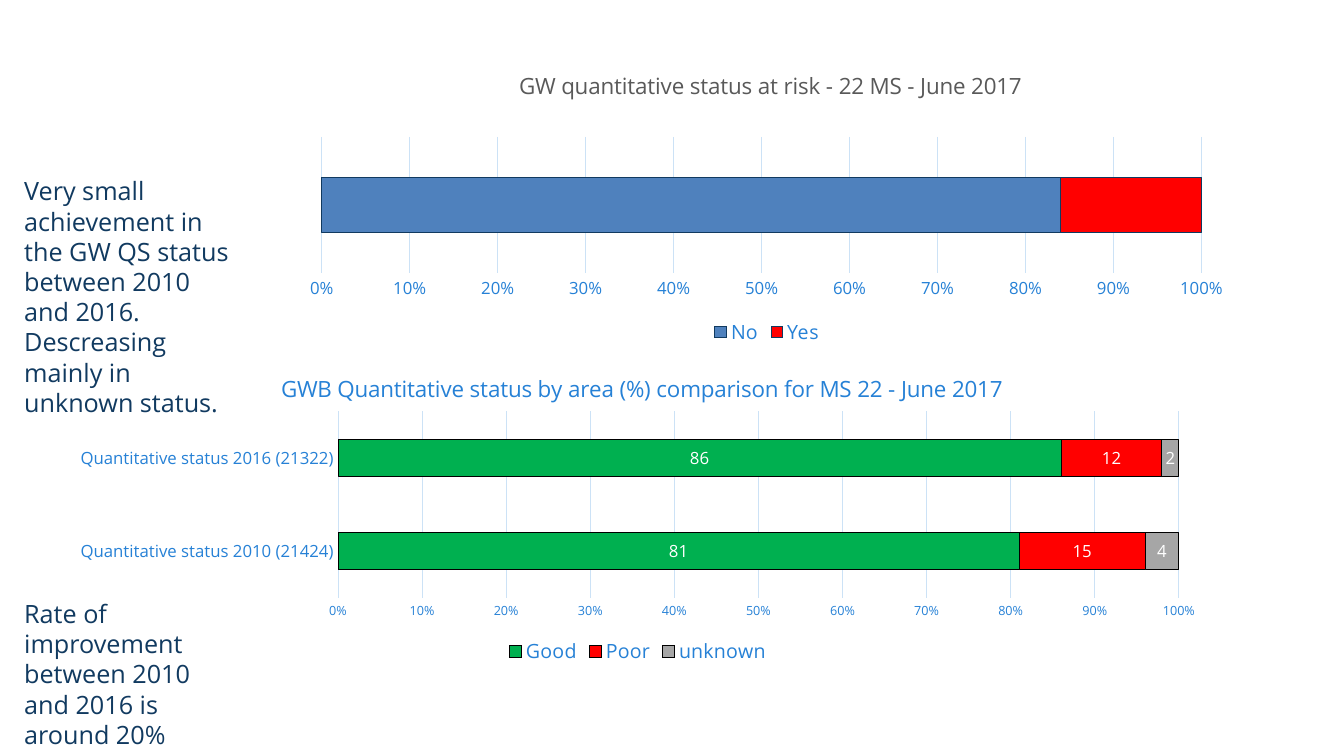
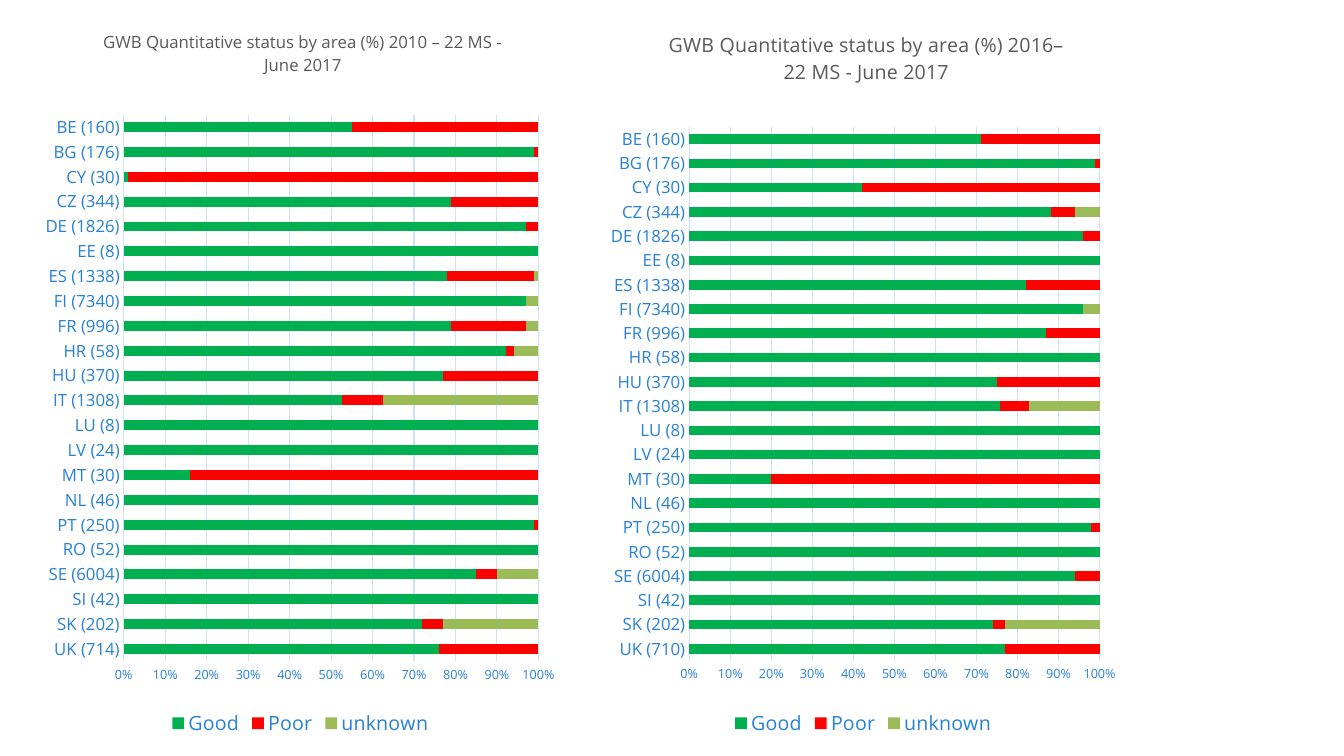
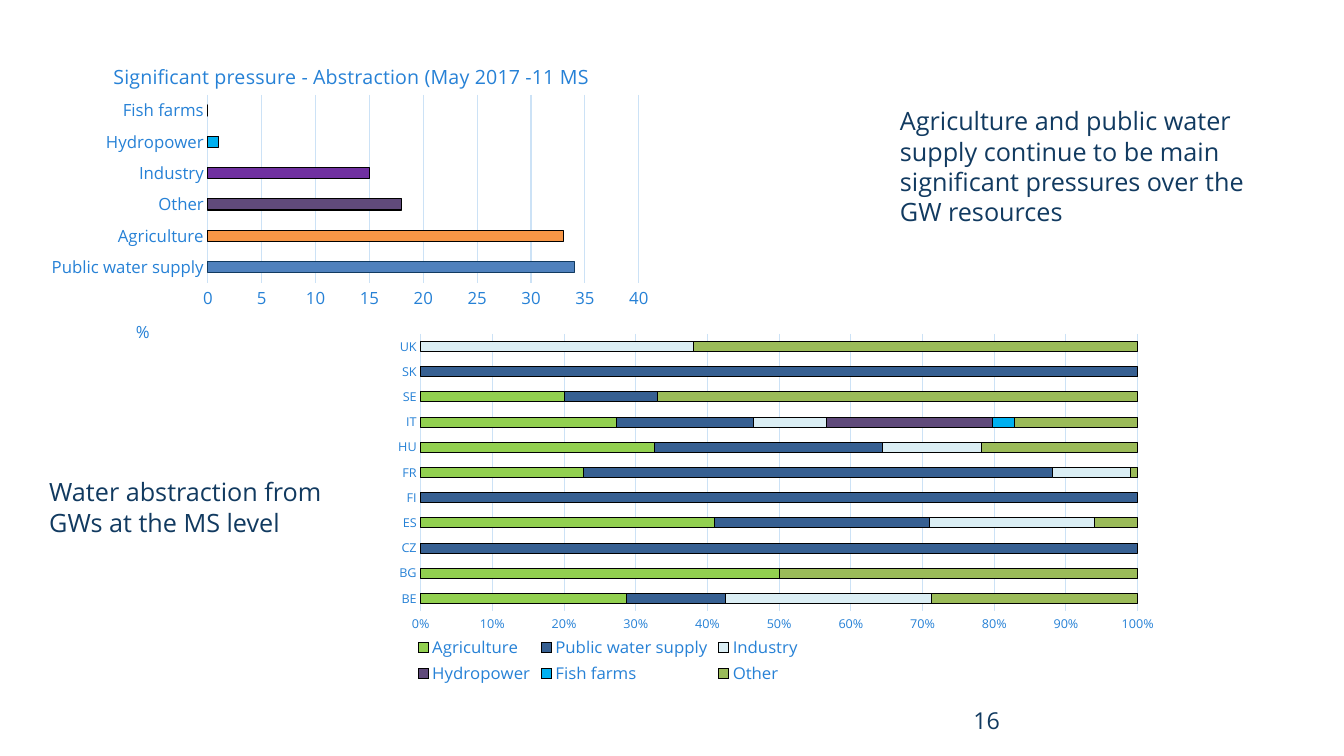
from pptx import Presentation
from pptx.chart.data import CategoryChartData
from pptx.dml.color import RGBColor
from pptx.enum.chart import XL_CHART_TYPE, XL_LEGEND_POSITION, XL_TICK_MARK
from pptx.enum.text import MSO_ANCHOR
from pptx.oxml import parse_xml
from pptx.oxml.ns import nsdecls, qn
from pptx.util import Cm, Pt

FONT = "Open Sans"
COLORS = {
    "navy": "113A60", "sky": "2681D6", "grid": "CCE2F6", "gray": "595959",
    "black": "000000", "white": "FFFFFF", "silver": "A6A6A6",
    "good": "00B050", "poor": "FF0000", "olive": "9BBB59", "blue": "4F81BD",
    "orange": "F79646", "plum": "604A7B", "violet": "7030A0", "cyan": "00B0F0",
    "lime": "92D050", "steel": "376092", "ice": "DBEEF4",
}
AREA_COLORS = ["good", "poor", "olive"]

COUNTRIES = ["SK (202)", "SI (42)", "SE (6004)", "RO (52)", "PT (250)", "NL (46)",
             "MT (30)", "LV (24)", "LU (8)", "IT (1308)", "HU (370)", "HR (58)",
             "FR (996)", "FI (7340)", "ES (1338)", "EE (8)", "DE (1826)",
             "CZ (344)", "CY (30)", "BG (176)", "BE (160)"]
STATUS_2010 = {
    "Good": [76, 72, 100, 85, 100, 98, 100, 16, 100, 100, 52, 77, 93, 79, 97, 78,
             100, 97, 79, 1, 99, 55],
    "Poor": [24, 5, None, 5, None, 1, None, 84, None, None, 10, 23, 2, 18, 0, 21,
             None, 3, 21, 99, 1, 45],
    "unknown": [0, 23, None, 10, None, 0, None, None, None, None, 37, None, 6, 3, 3, 1,
                None, None, None, None, None, None],
}
STATUS_2016 = {
    "Good": [77, 74, 100, 94, 100, 98, 100, 20, 100, 100, 75, 75, 100, 87, 95, 82,
             100, 96, 89, 42, 99, 71],
    "Poor": [23, 3, None, 6, None, 2, None, 80, None, None, 7, 25, None, 13, 0, 18,
             None, 4, 6, 58, 1, 29],
    "unknown": [None, 23, None, None, None, None, None, None, None, None, 17, None,
                None, None, 4, None, None, None, 6, None, None, None],
}
ABSTRACTION = {
    "Agriculture": [29, 50, None, 41, None, 23, 33, 27, 20, None, None],
    "Public water supply": [14, 0, 100, 30, 100, 66, 32, 19, 13, 100, None],
    "Industry": [29, 0, None, 23, None, 11, 14, 10, None, None, 38],
    "Hydropower": [None] * 7 + [23] + [None] * 3,
    "Fish farms": [None] * 7 + [3] + [None] * 3,
    "Other": [29, 50, None, 6, None, 1, 22, 17, 67, None, 62],
}


def rgb(name):
    return RGBColor.from_string(COLORS[name])


def style_font(font, size, color):
    font.name = FONT
    font.size = Pt(size)
    font.bold = False
    font.color.rgb = rgb(color)


def style_line(line, color):
    line.color.rgb = rgb(color)
    line.width = Pt(0.75)


def add_note(slide, box, paragraphs, size=18, gaps=None, anchor=MSO_ANCHOR.TOP):
    """Add body text; gaps maps a paragraph index to its space before in points."""
    frame = slide.shapes.add_textbox(*map(Cm, box)).text_frame
    frame.word_wrap = True
    frame.vertical_anchor = anchor
    frame.text = "\n".join(paragraphs)
    for index, paragraph in enumerate(frame.paragraphs):
        style_font(paragraph.font, size, "navy")
        if gaps and index in gaps:
            paragraph.space_before = Pt(gaps[index])


def place(element, index, box, frame):
    """Fix a chart part at box (left, top and maybe size), in cm on the slide."""
    left, top, width, height = frame
    shares = {"x": (box[0] - left) / width, "y": (box[1] - top) / height}
    if len(box) == 4:
        shares.update(w=box[2] / width, h=box[3] / height)
    target = '<c:layoutTarget val="inner"/>' if len(box) == 4 else ""
    modes = "".join(f'<c:{k}Mode val="edge"/>' for k in "xy")
    values = "".join(f'<c:{k} val="{v:.4f}"/>' for k, v in shares.items())
    for old in element.findall(qn("c:layout")):
        element.remove(old)
    element.insert(index, parse_xml(
        f'<c:layout {nsdecls("c")}><c:manualLayout>{target}{modes}{values}'
        "</c:manualLayout></c:layout>"))


def set_title(title, text, size, color, corner, frame):
    title.text_frame.text = text
    style_font(title.text_frame.paragraphs[0].font, size, color)
    place(title._element, 1, corner, frame)


def style_axes(chart, category_size, value_size, value_format):
    category, value = chart.category_axis, chart.value_axis
    for axis, size in ((category, category_size), (value, value_size)):
        axis.major_tick_mark = axis.minor_tick_mark = XL_TICK_MARK.NONE
        style_font(axis.tick_labels.font, size, "sky")
    style_line(category.format.line, "grid")
    value.format.line.fill.background()
    value.has_major_gridlines = True
    style_line(value.major_gridlines.format.line, "grid")
    value.minimum_scale = 0
    value.tick_labels.number_format = value_format
    value.tick_labels.number_format_is_linked = False


def add_bars(slide, frame, plot_box, categories, series, colors, *, kind, gap=150,
             outline=None, category_size=12, value_size=9, value_format="0%"):
    data = CategoryChartData()
    data.categories = categories
    for name, values in series.items():
        data.add_series(name, values)
    chart = slide.shapes.add_chart(kind, *map(Cm, frame), data).chart
    style_font(chart.font, 10, "navy")
    chart.has_title = chart.has_legend = False
    style_axes(chart, category_size, value_size, value_format)
    plot = chart.plots[0]
    plot.vary_by_categories = False
    plot.gap_width = gap
    for bars, color in zip(plot.series, colors):
        bars.format.fill.solid()
        bars.format.fill.fore_color.rgb = rgb(color)
        if outline:
            style_line(bars.format.line, outline)
    place(chart._chartSpace.chart.plotArea, 0, plot_box, frame)
    return chart


def add_share_bars(slide, frame, plot_box, categories, series, colors,
                   legend_size=14, legend_corner=None, **options):
    """Add bars stacked to 100 % with a legend below."""
    chart = add_bars(slide, frame, plot_box, categories, series, colors,
                     kind=XL_CHART_TYPE.BAR_STACKED_100, **options)
    chart.plots[0].overlap = 100
    chart.has_legend = True
    legend = chart.legend
    legend.position = XL_LEGEND_POSITION.BOTTOM
    legend.include_in_layout = False
    style_font(legend.font, legend_size, "sky")
    if legend_corner:
        place(legend._element, 1, legend_corner, frame)
    return chart


def label_values(chart):
    for bars in chart.plots[0].series:
        labels = bars.data_labels
        labels.show_value = True
        labels.number_format = "#,##0"
        labels.number_format_is_linked = False
        style_font(labels.font, 12, "white")


def build_status_slide(slide):
    add_note(slide, (0.36, 4.3, 5.97, 14.1), [
        "Very small achievement in the GW QS status between 2010 and 2016.",
        "Descreasing mainly in unknown status.",
        "Rate of improvement between 2010 and 2016 is around 20%",
    ], gaps={2: 129})

    frame = (1.45, 8.81, 29.26, 8.05)
    comparison = add_share_bars(
        slide, frame, (8.52, 10.36, 21.19, 4.71),
        ["Quantitative status 2010 (21424)", "Quantitative status 2016 (21322)"],
        {"Good": [81, 86], "Poor": [15, 12], "unknown": [4, 2]},
        ["good", "poor", "silver"], outline="black")
    label_values(comparison)
    set_title(comparison.chart_title,
              "GWB Quantitative status by area (%) comparison for MS 22 - June 2017",
              16, "sky", (6.98, 9.27), frame)

    frame = (7.34, 1.19, 23.98, 7.62)
    risk = add_share_bars(slide, frame, (8.11, 3.45, 22.17, 3.43), ["1"],
                          {"No": [84], "Yes": [16]}, ["blue", "poor"],
                          outline="navy", value_size=12)
    risk.category_axis.visible = False
    set_title(risk.chart_title, "GW quantitative status at risk - 22 MS - June 2017",
              16, "gray", (12.98, 1.64), frame)


def build_country_slide(slide):
    panels = [
        ((0.89, 0, 13.36, 18.67), (3.12, 2.89, 10.45, 13.78), "UK (714)", STATUS_2010,
         "GWB Quantitative status by area (%) 2010 – 22 MS - June 2017", 12, (2.52, 0.64)),
        ((15.14, 0, 13.23, 18.67), (17.37, 3.2, 10.34, 13.46), "UK (710)", STATUS_2016,
         "GWB Quantitative status by area (%) 2016– 22 MS - June 2017", 14, (16.76, 0.64)),
    ]
    for frame, plot_box, first_country, status, title, size, corner in panels:
        chart = add_share_bars(slide, frame, plot_box, [first_country] + COUNTRIES,
                               status, AREA_COLORS)
        set_title(chart.chart_title, title, size, "gray", corner, frame)


def build_pressure_slide(slide):
    add_note(slide, (24.28, 17.65, 7.9, 1.02), ["16"], size=16.6,
             anchor=MSO_ANCHOR.MIDDLE)

    frame = (0.99, 0.99, 15.67, 8.23)
    pressures = add_bars(
        slide, frame, (5.24, 2.39, 10.86, 4.74),
        ["Public water supply", "Agriculture", "Other", "Industry", "Hydropower",
         "Fish farms"],
        {"Series 1": [34, 33, 18, 15, 1, 0]}, ["blue"],
        kind=XL_CHART_TYPE.BAR_CLUSTERED, gap=182, outline="black",
        value_size=12, value_format="General")
    pressures.value_axis.maximum_scale = 40
    pressures.value_axis.major_unit = 5
    bars = pressures.plots[0].series[0]
    for index, color in enumerate(["blue", "orange", "plum", "violet", "cyan"]):
        bar = bars.points[index].format
        bar.fill.solid()
        bar.fill.fore_color.rgb = rgb(color)
        style_line(bar.line, "black" if index else "navy")
    set_title(pressures.chart_title, "Significant pressure - Abstraction (May 2017 -11 MS",
              14, "sky", (2.77, 1.44), frame)
    set_title(pressures.value_axis.axis_title, "%", 12, "sky", (3.35, 7.95), frame)

    add_note(slide, (22.43, 2.54, 9.73, 3.33), [
        "Agriculture and public water supply continue to be main significant "
        "pressures over the GW resources"])
    add_share_bars(slide, (9.65, 8.23, 19.81, 9.12), (10.6, 8.42, 18.07, 7.23),
                   ["BE", "BG", "CZ", "ES", "FI", "FR", "HU", "IT", "SE", "SK", "UK"],
                   ABSTRACTION, ["lime", "steel", "ice", "plum", "cyan", "olive"],
                   legend_size=12, legend_corner=(10.4, 16.2), outline="black",
                   category_size=9)
    add_note(slide, (0.99, 11.89, 7.85, 1.8),
             ["Water abstraction from GWs at the MS level"])


def main():
    deck = Presentation()
    deck.slide_width, deck.slide_height = Cm(33.87), Cm(19.05)
    blank = deck.slide_layouts[6]
    for build in (build_status_slide, build_country_slide, build_pressure_slide):
        build(deck.slides.add_slide(blank))
    deck.save("out.pptx")


if __name__ == "__main__":
    main()
